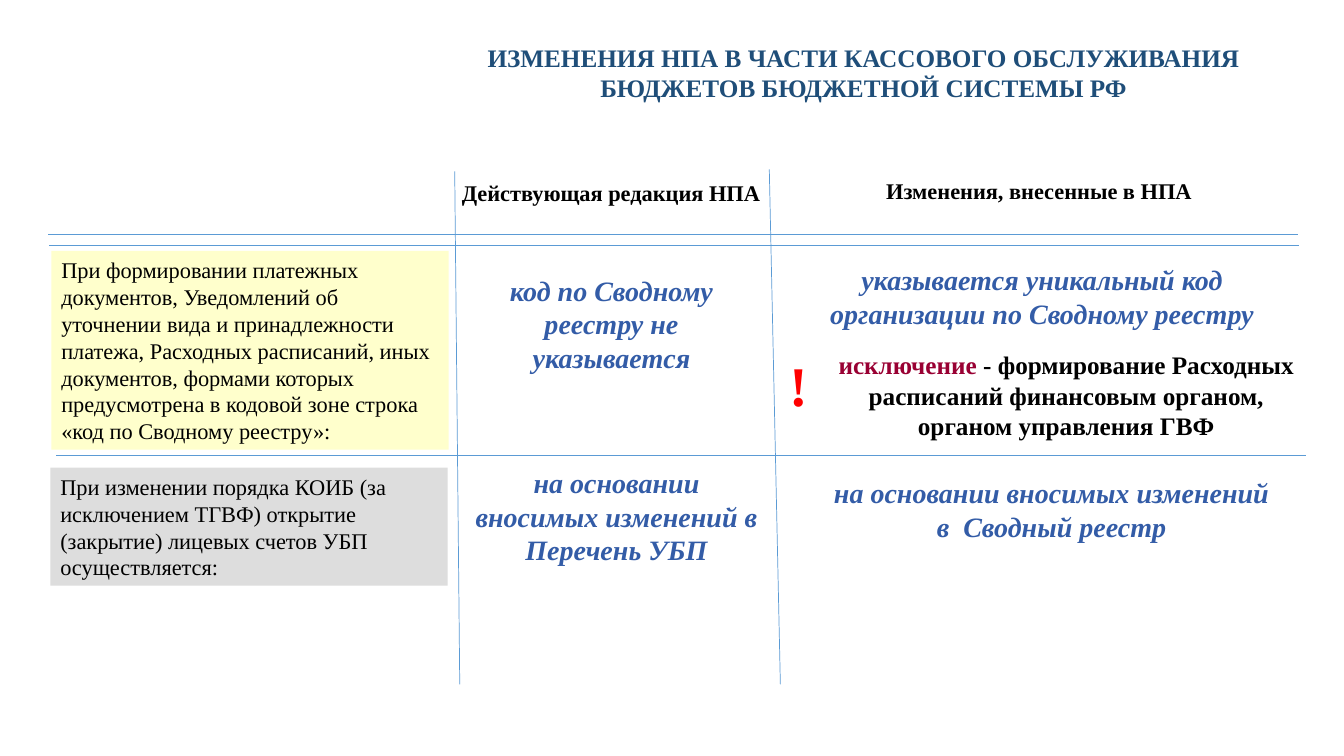
"""Build the slide comparing current and amended rules on budget cash services."""
import pptx
import pptx.dml.color
import pptx.enum.shapes
import pptx.enum.text
import pptx.oxml.xmlchemy
import pptx.util

Inches = pptx.util.Inches
RGBColor = pptx.dml.color.RGBColor
ALIGN = pptx.enum.text.PP_ALIGN

NAVY = RGBColor(0x1F, 0x4E, 0x79)
BLUE = RGBColor(0x33, 0x5C, 0xA7)
RULE = RGBColor(0x5B, 0x9B, 0xD5)
BLACK = RGBColor(0x00, 0x00, 0x00)
RED = RGBColor(0xFF, 0x00, 0x00)
CRIMSON = RGBColor(0x99, 0x00, 0x33)
YELLOW = RGBColor(0xFF, 0xFF, 0xCC)
GREY = RGBColor(0xDD, 0xDD, 0xDD)

TITLE = {"size": 18, "bold": True, "color": NAVY}
HEADING = {"size": 16, "bold": True, "color": BLACK}
ANSWER = {"size": 20, "bold": True, "italic": True, "color": BLUE}
TOPIC = {"size": 16, "color": BLACK}
NOTE = {"size": 18, "bold": True, "color": BLACK}
NOTE_LEAD = {**NOTE, "color": CRIMSON}
MARK = {"size": 40, "bold": True, "color": RED}

RULES = [
    (0.48, 2.33, 12.87, 2.33),
    (0.49, 2.43, 12.88, 2.43),
    (0.56, 4.52, 12.95, 4.52),
    (7.63, 1.68, 7.74, 6.79),
    (4.51, 1.7, 4.56, 6.79),
]
TOPICS = [
    ((0.51, 2.49, 3.94, 1.97), YELLOW,
     "При формировании платежных документов, Уведомлений об уточнении вида "
     "и принадлежности платежа, Расходных расписаний, иных документов, формами "
     "которых предусмотрена в кодовой зоне строка «код по Сводному реестру»:"),
    ((0.5, 4.64, 3.94, 1.17), GREY,
     "При изменении порядка КОИБ (за исключением ТГВФ) открытие (закрытие) "
     "лицевых счетов УБП осуществляется:"),
]
LABELS = [
    ((4.59, 0.37, 7.95, 0.71),
     [("ИЗМЕНЕНИЯ НПА В ЧАСТИ КАССОВОГО ОБСЛУЖИВАНИЯ "
       "БЮДЖЕТОВ БЮДЖЕТНОЙ СИСТЕМЫ РФ", TITLE)]),
    ((4.4, 1.73, 3.32, 0.37), [("Действующая редакция НПА", HEADING)]),
    ((8.61, 1.71, 3.39, 0.37), [("Изменения, внесенные в НПА", HEADING)]),
    ((4.51, 2.66, 3.11, 1.1), [("код по Сводному реестру не указывается", ANSWER)]),
    ((7.81, 2.56, 5.05, 0.77),
     [("указывается уникальный код организации по Сводному реестру", ANSWER)]),
    ((8.05, 3.42, 5.05, 1),
     [("исключение ", NOTE_LEAD),
      ("- формирование Расходных расписаний финансовым органом, "
       "органом управления ГВФ", NOTE)]),
    ((7.65, 3.43, 0.55, 0.77), [("!", MARK)]),
    ((4.56, 4.57, 3.11, 1.1),
     [("на основании вносимых изменений в Перечень УБП", ANSWER)]),
    ((8.11, 4.67, 4.64, 0.77),
     [("на основании вносимых изменений в  Сводный реестр", ANSWER)]),
]


def write(box, spans, align):
    """Fill a box with one paragraph of formatted spans."""
    frame = box.text_frame
    frame.word_wrap = True
    frame.auto_size = pptx.enum.text.MSO_AUTO_SIZE.SHAPE_TO_FIT_TEXT
    para = frame.paragraphs[0]
    para.alignment = align
    for text, look in spans:
        span = para.add_run()
        span.text = text
        values = {**look, "name": "Times New Roman", "size": pptx.util.Pt(look["size"])}
        span.font.color.rgb = values.pop("color")
        for name, value in values.items():
            setattr(span.font, name, value)


def add_label(page, place, spans):
    """Add a centred text box."""
    write(page.shapes.add_textbox(*map(Inches, place)), spans, ALIGN.CENTER)


def add_topic(page, place, fill, text):
    """Add a filled rectangle with left-aligned text."""
    kind = pptx.enum.shapes.MSO_SHAPE.RECTANGLE
    box = page.shapes.add_shape(kind, *map(Inches, place))
    box.shadow.inherit = False
    box.fill.solid()
    box.fill.fore_color.rgb = fill
    box.line.fill.background()
    write(box, [(text, TOPIC)], ALIGN.LEFT)


def add_rule(page, ends):
    """Add a thin straight line without a shadow."""
    kind = pptx.enum.shapes.MSO_CONNECTOR.STRAIGHT
    rule = page.shapes.add_connector(kind, *map(Inches, ends))
    rule.line.color.rgb = RULE
    rule.line.width = pptx.util.Pt(0.5)
    effects = pptx.oxml.xmlchemy.OxmlElement("a:effectLst")
    rule._element.spPr.append(effects)


def main():
    """Build the slide and save it."""
    deck = pptx.Presentation()
    deck.slide_width, deck.slide_height = Inches(13.33), Inches(7.5)
    page = deck.slides.add_slide(deck.slide_layouts[6])
    for ends in RULES:
        add_rule(page, ends)
    for place, fill, text in TOPICS:
        add_topic(page, place, fill, text)
    for place, spans in LABELS:
        add_label(page, place, spans)
    deck.save("out.pptx")


if __name__ == "__main__":
    main()
